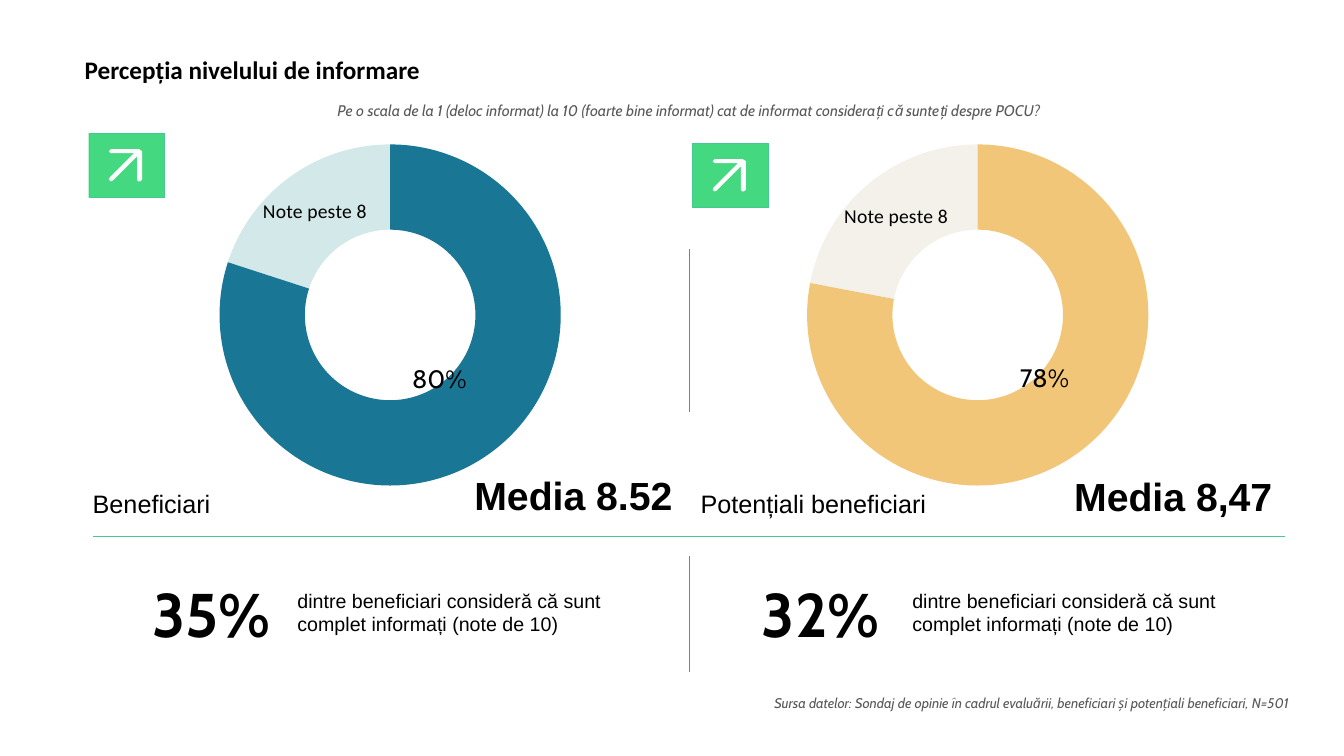
import lxml.etree
import pptx
import pptx.chart.data
import pptx.dml.color
import pptx.enum.chart
import pptx.enum.shapes
import pptx.enum.text
import pptx.oxml
import pptx.oxml.ns
import pptx.util

COLOURS = {
    "ink": "000000", "muted": "595959", "white": "FFFFFF",
    "icon": "44D880", "rule": "47C893", "divider": "808080",
    "teal": "197795", "pale teal": "248E90",
    "amber": "F1C678", "pale amber": "C4BD97",
}
ARROW = [(2, 0), (30, 0), (33, 2), (33, 30), (31, 32), (29, 32), (28, 30), (28, 7),
         (4, 31), (2, 32), (0, 30), (1, 28), (25, 4), (2, 4), (0, 2)]
ALIGN = pptx.enum.text.PP_ALIGN
ANCHOR = pptx.enum.text.MSO_ANCHOR


def colour(name):
    return pptx.dml.color.RGBColor.from_string(COLOURS[name])


def manual_layout(inner=False, **shares):
    """Return a c:layout element; the shares are x, y, w and h."""
    target = '<c:layoutTarget val="inner"/>' if inner else ""
    modes = '<c:xMode val="edge"/><c:yMode val="edge"/>' if inner else ""
    values = "".join(f'<c:{key} val="{share}"/>' for key, share in shares.items())
    return pptx.oxml.parse_xml(
        f'<c:layout {pptx.oxml.ns.nsdecls("c")}><c:manualLayout>'
        f"{target}{modes}{values}</c:manualLayout></c:layout>")


class Canvas:
    """Draws on one slide; every length is a percentage of the slide's size."""

    def __init__(self, deck):
        self.width, self.height = deck.slide_width, deck.slide_height
        self.slide = deck.slides.add_slide(deck.slide_layouts[5])
        self.shapes = self.slide.shapes

    def place(self, *lengths):
        """Turn alternating horizontal and vertical percentages into EMU."""
        return [round(length * (self.height if i % 2 else self.width) / 100)
                for i, length in enumerate(lengths)]

    def style(self, font, face, size, tone="ink", bold=False, italic=False):
        font.name, font.size = face, pptx.util.Pt(size)
        font.bold, font.italic = bold, italic
        font.color.rgb = colour(tone)

    def fill_frame(self, frame, words, align, anchor, insets, **style):
        frame.word_wrap = True
        frame.auto_size = pptx.enum.text.MSO_AUTO_SIZE.NONE
        frame.vertical_anchor = anchor
        side, end = map(pptx.util.Inches, insets)
        frame.margin_left = frame.margin_right = side
        frame.margin_top = frame.margin_bottom = end
        paragraph = frame.paragraphs[0]
        paragraph.alignment = align
        run = paragraph.add_run()
        run.text = words
        self.style(run.font, **style)

    def title(self, words, box, **style):
        heading = self.shapes.title
        heading.left, heading.top, heading.width, heading.height = self.place(*box)
        self.fill_frame(heading.text_frame, words, ALIGN.LEFT, ANCHOR.MIDDLE, (0, 0), **style)

    def text(self, words, box, align=ALIGN.LEFT, anchor=ANCHOR.MIDDLE,
             insets=(0, 0.05), **style):
        frame = self.shapes.add_textbox(*self.place(*box)).text_frame
        self.fill_frame(frame, words, align, anchor, insets, **style)

    def line(self, start, end, tone, weight):
        rule = self.shapes.add_connector(
            pptx.enum.shapes.MSO_CONNECTOR.STRAIGHT, *self.place(*start, *end))
        rule.line.color.rgb = colour(tone)
        rule.line.width = pptx.util.Pt(weight)
        lxml.etree.SubElement(rule._element.spPr, pptx.oxml.ns.qn("a:effectLst"))

    def arrow_icon(self, left, top):
        tile = self.shapes.add_shape(pptx.enum.shapes.MSO_SHAPE.RECTANGLE,
                                     *self.place(left, top, 5.63, 8.53))
        tile.shadow.inherit = False
        tile.fill.solid()
        tile.fill.fore_color.rgb = colour("icon")
        tile.line.color.rgb = colour("rule")
        tile.line.width = pptx.util.Pt(0.25)
        builder = self.shapes.build_freeform(*ARROW[0], scale=pptx.util.Inches(0.01))
        builder.add_line_segments(ARROW[1:], close=True)
        arrow = builder.convert_to_shape(*self.place(left + 1.5, top + 2.13))
        arrow.shadow.inherit = False
        arrow.fill.solid()
        arrow.fill.fore_color.rgb = colour("white")
        arrow.line.fill.background()

    def doughnut(self, box, share, tones, label_shift):
        data = pptx.chart.data.CategoryChartData(number_format="0%")
        data.categories = ["1", "2"]
        data.add_series("Series 1", [share, round(1 - share, 2)])
        chart = self.shapes.add_chart(pptx.enum.chart.XL_CHART_TYPE.DOUGHNUT,
                                      *self.place(*box), data).chart
        chart.has_legend = chart.has_title = False
        self.style(chart.font, "Cabin", 18)
        plot = chart.plots[0]
        plot.vary_by_categories = False
        points = plot.series[0].points
        for i, tone in enumerate(tones):
            fill = points[i].format.fill
            fill.solid()
            fill.fore_color.rgb = colour(tone)
        self.style(points[0].data_label.font, "Cabin", 18)
        note = points[1].data_label.text_frame.paragraphs[0].add_run()
        note.text = "Note peste 8"
        self.style(note.font, "Calibri", 14)

        root = chart._chartSpace
        pale = root.xpath('.//c:dPt[c:idx/@val="1"]//a:srgbClr')[0]
        lxml.etree.SubElement(pale, pptx.oxml.ns.qn("a:alpha")).set("val", "20000")
        root.xpath(".//c:holeSize")[0].set("val", "72")
        share_label = root.xpath('.//c:dLbl[c:idx/@val="0"]')[0]
        share_label.insert(1, manual_layout(x=label_shift[0], y=label_shift[1]))
        share_label.insert(2, pptx.oxml.parse_xml(
            f'<c:numFmt {pptx.oxml.ns.nsdecls("c")} formatCode="0%" sourceLinked="0"/>'))
        area = root.xpath(".//c:plotArea")[0]
        for automatic in area.xpath("./c:layout"):
            area.remove(automatic)
        area.insert(0, manual_layout(inner=True, x=0.04, y=0.06, w=0.92, h=0.88))


GROUPS = [
    {"name": "Beneficiari", "mean": "Media 8.52", "informed": "35%", "share": 0.8,
     "tones": ("teal", "pale teal"), "label_shift": (-0.07, -0.1),
     "chart_x": 15.23, "name_x": 6.9, "icon": (6.6, 17.6), "mean_at": (33.9, 61.6),
     "informed_x": 10.58, "remark_x": 22.13},
    {"name": "Potențiali beneficiari", "mean": "Media 8,47", "informed": "32%", "share": 0.78,
     "tones": ("amber", "pale amber"), "label_shift": (-0.04, -0.09),
     "chart_x": 58.95, "name_x": 52.13, "icon": (51.53, 18.93), "mean_at": (78.53, 61.73),
     "informed_x": 55.95, "remark_x": 67.88},
]


def main():
    deck = pptx.Presentation()
    deck.slide_width, deck.slide_height = pptx.util.Inches(13.33), pptx.util.Inches(7.5)
    canvas = Canvas(deck)
    canvas.title("Percepția nivelului de informare", (6.3, 4, 90, 10.4),
                 face="Calibri", size=18, bold=True)
    for group in GROUPS:
        canvas.doughnut((group["chart_x"], 15.87, 27.6, 51.6), group["share"],
                        group["tones"], group["label_shift"])

    canvas.line((6.9, 70.93), (95.63, 70.93), "rule", 0.75)
    for top, bottom in [(32.93, 54.53), (73.6, 88.93)]:
        canvas.line((51.3, top), (51.3, bottom), "divider", 0.25)

    for group in GROUPS:
        canvas.arrow_icon(*group["icon"])
        canvas.text(group["name"], (group["name_x"], 63.87, 18, 5.33), face="Arial", size=18)
        canvas.text(group["mean"], (*group["mean_at"], 16.13, 7.6), ALIGN.RIGHT,
                    face="Arial", size=28, bold=True)
        canvas.text(group["informed"], (group["informed_x"], 75.47, 10.8, 11.2),
                    insets=(0.1, 0.05), face="Cabin", size=44, bold=True)
        canvas.text("dintre beneficiari consideră că sunt complet informați (note de 10)",
                    (group["remark_x"], 77.2, 23.03, 7.6), face="Arial", size=14)

    captions = [
        ("Pe o scala de la 1 (deloc informat) la 10 (foarte bine informat) cat de informat "
         "considerați că sunteți despre POCU?", (18.53, 12.67, 65.55, 3.87), ALIGN.CENTER, 11),
        ("Sursa datelor: Sondaj de opinie în cadrul evaluării, beneficiari și potențiali "
         "beneficiari, N=501", (31.05, 91.2, 65.55, 3.6), ALIGN.RIGHT, 10),
    ]
    for words, box, align, size in captions:
        canvas.text(words, box, align, ANCHOR.TOP, (0.1, 0.05),
                    face="Cabin", size=size, tone="muted", italic=True)
    deck.save("out.pptx")


if __name__ == "__main__":
    main()
